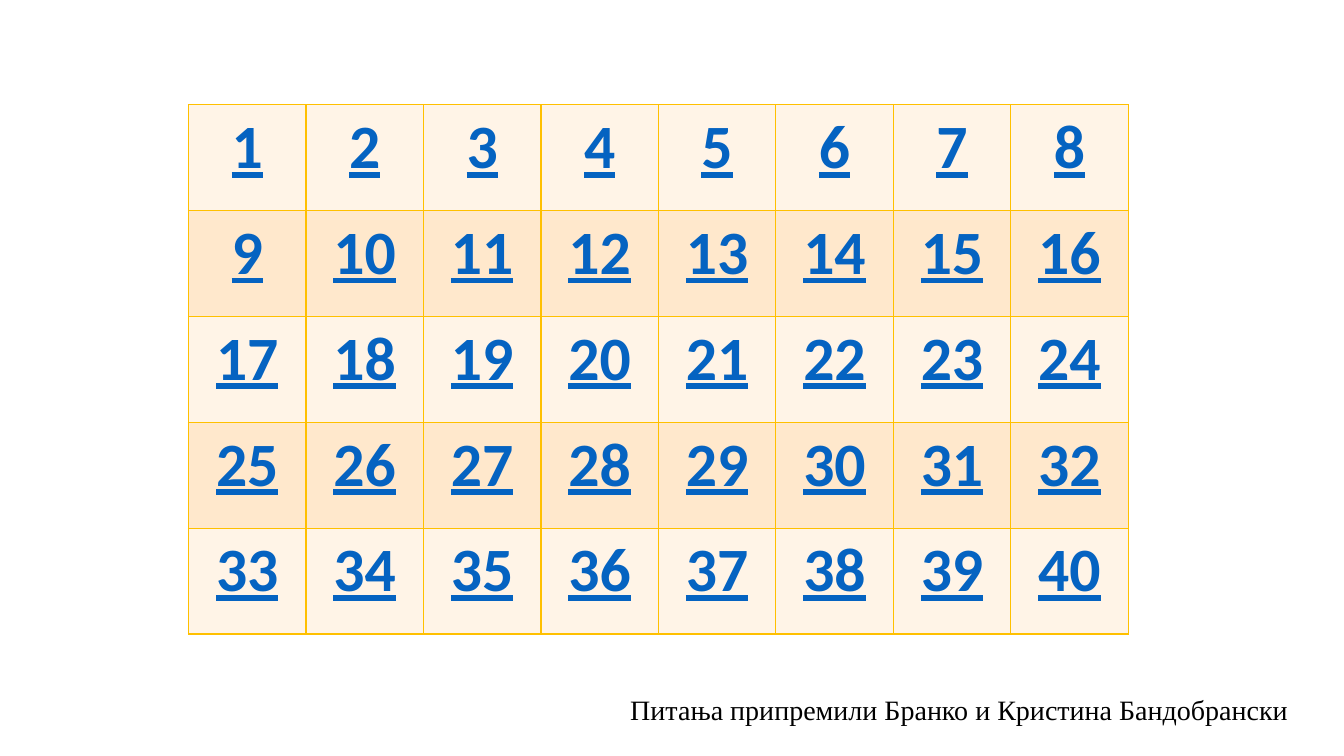
from dataclasses import dataclass

from lxml import etree
from pptx import Presentation
from pptx.dml.color import RGBColor
from pptx.enum.text import PP_ALIGN
from pptx.oxml.ns import qn
from pptx.util import Emu, Pt

CENTER = PP_ALIGN.CENTER
EMU_PER_PX = 9144  # 100 px to the inch

WHITE = RGBColor(0xFF, 0xFF, 0xFF)
BLACK = RGBColor(0x00, 0x00, 0x00)
LINK_BLUE = RGBColor(0x05, 0x63, 0xC1)
BORDER_GOLD = RGBColor(0xFF, 0xC0, 0x00)
BAND_FILLS = (RGBColor(0xFF, 0xF4, 0xE7), RGBColor(0xFF, 0xE8, 0xCC))

ROWS, COLUMNS = 5, 8
CREDIT = "Питања припремили Бранко и Кристина Бандобрански"


@dataclass(frozen=True)
class Area:
    left: int
    top: int
    width: int
    height: int

    def emu(self) -> tuple[Emu, Emu, Emu, Emu]:
        return px(self.left), px(self.top), px(self.width), px(self.height)


@dataclass(frozen=True)
class TextStyle:
    font: str
    size: int
    color: RGBColor
    bold: bool = False
    underline: bool = False


BOARD = Area(187, 104, 932, 525)
CREDIT_AREA = Area(570, 682, 763, 44)
NUMBER_STYLE = TextStyle("Calibri", 44, LINK_BLUE, bold=True, underline=True)
CREDIT_STYLE = TextStyle("Times New Roman", 20, BLACK)


def px(length: int) -> Emu:
    return Emu(length * EMU_PER_PX)


def write(frame, text: str, style: TextStyle) -> None:
    para = frame.paragraphs[0]
    para.text = text
    para.alignment = CENTER
    font = para.font
    font.name = style.font
    font.size = Pt(style.size)
    font.bold = style.bold
    font.underline = style.underline
    font.color.rgb = style.color


def add_borders(cell, color: RGBColor) -> None:
    properties = cell._tc.get_or_add_tcPr()
    for side in ("a:lnL", "a:lnR", "a:lnT", "a:lnB"):
        line = etree.SubElement(properties, qn(side), w=str(Pt(1)))
        fill = etree.SubElement(line, qn("a:solidFill"))
        etree.SubElement(fill, qn("a:srgbClr"), val=str(color))


def add_board(page) -> None:
    table = page.shapes.add_table(ROWS, COLUMNS, *BOARD.emu()).table
    table.first_row = False
    table.horz_banding = False
    for index, cell in enumerate(table.iter_cells()):
        add_borders(cell, BORDER_GOLD)
        cell.fill.solid()
        cell.fill.fore_color.rgb = BAND_FILLS[index // COLUMNS % 2]
        write(cell.text_frame, str(index + 1), NUMBER_STYLE)


def add_credit(page) -> None:
    box = page.shapes.add_textbox(*CREDIT_AREA.emu())
    box.text_frame.word_wrap = True
    write(box.text_frame, CREDIT, CREDIT_STYLE)


def main() -> None:
    deck = Presentation()
    deck.slide_width, deck.slide_height = px(1333), px(750)
    page = deck.slides.add_slide(deck.slide_layouts[6])
    page.background.fill.solid()
    page.background.fill.fore_color.rgb = WHITE

    # Numbered question board
    add_board(page)

    # Credit line
    add_credit(page)

    deck.save("out.pptx")


if __name__ == "__main__":
    main()
